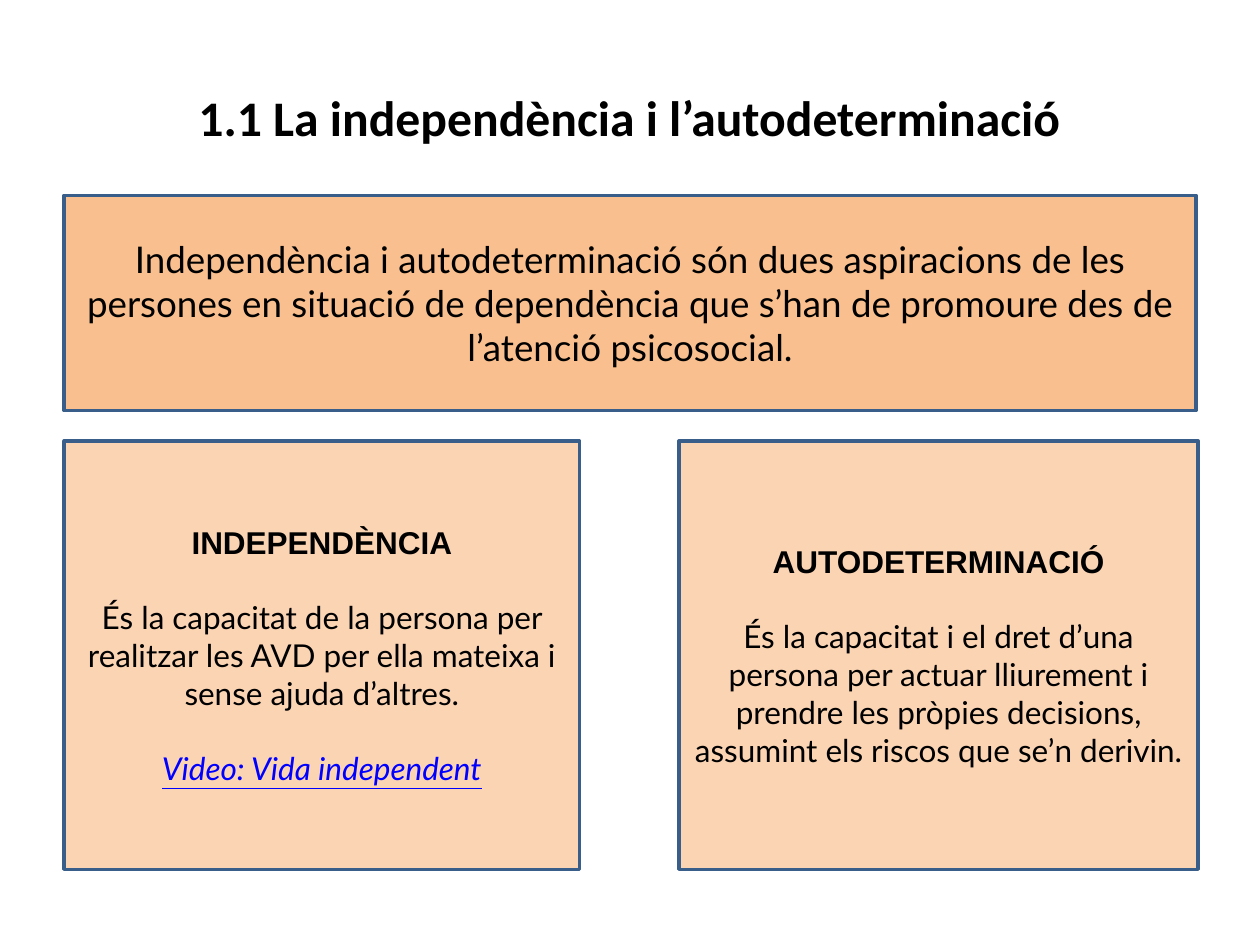
from pptx import Presentation
from pptx.util import Pt
from pptx.dml.color import RGBColor
from pptx.enum.shapes import MSO_SHAPE
from pptx.enum.text import PP_ALIGN, MSO_ANCHOR, MSO_AUTO_SIZE

HUES = {"ink": "000000", "link": "0000FF", "edge": "395E89",
        "deep": "FABF8E", "pale": "FBD4B4"}
HEAD = {"font": "Arial", "size": 18, "bold": True}
BODY = {"font": "Lato", "size": 18, "gap": 21.3}
LINK = {**BODY, "hue": "link", "italic": True, "line": True}

TITLE = [("1.1 La independència i l’autodeterminació",
          {"font": "Calibri", "size": 28.4, "bold": True})]
INTRO = [("Independència i autodeterminació són dues aspiracions de les "
          "persones en situació de dependència que s’han de promoure des de "
          "l’atenció psicosocial.",
          {"font": "Lato", "size": 21, "gap": 4.8})]
SELF = [("INDEPENDÈNCIA", HEAD),
        ("És la capacitat de la persona per realitzar les AVD per ella "
         "mateixa i sense ajuda d’altres.", BODY),
        ("Video: Vida independent", LINK)]
CHOICE = [("AUTODETERMINACIÓ", HEAD),
          ("És la capacitat i el dret d’una persona per actuar lliurement i "
           "prendre les pròpies decisions, assumint els riscos que se’n "
           "derivin.", BODY)]

LEFT, ROW, TALL = 36.7, 252, 244.8
BOXES = [
    (INTRO, "deep", (LEFT, 111.6, 646.6, 123.1)),
    (SELF, "pale", (LEFT, ROW, 294.5, TALL)),
    (CHOICE, "pale", (388.1, ROW, 296.6, TALL)),
]


def tint(name):
    return RGBColor.from_string(HUES[name])


def write(shape, paras):
    frame = shape.text_frame
    frame.word_wrap = True
    frame.auto_size = MSO_AUTO_SIZE.NONE
    frame.vertical_anchor = MSO_ANCHOR.MIDDLE
    for i, (text, look) in enumerate(paras):
        para = frame.add_paragraph() if i else frame.paragraphs[0]
        para.alignment = PP_ALIGN.CENTER
        para.space_before = Pt(look.get("gap", 0))
        run = para.add_run()
        run.text = text
        font = run.font
        font.name = look["font"]
        font.size = Pt(look["size"])
        font.bold = look.get("bold", False)
        font.italic = look.get("italic", False)
        font.underline = look.get("line", False)
        font.color.rgb = tint(look.get("hue", "ink"))


def main():
    deck = Presentation()
    deck.slide_width, deck.slide_height = Pt(720), Pt(540)
    slide = deck.slides.add_slide(deck.slide_layouts[5])
    title = slide.shapes.title
    title.left, title.top = Pt(36), Pt(21.6)
    title.width, title.height = Pt(648), Pt(90)
    write(title, TITLE)
    for paras, hue, place in BOXES:
        box = slide.shapes.add_shape(MSO_SHAPE.RECTANGLE, *map(Pt, place))
        box.shadow.inherit = False
        box.fill.solid()
        box.fill.fore_color.rgb = tint(hue)
        box.line.color.rgb = tint("edge")
        box.line.width = Pt(2)
        write(box, paras)
    deck.save("out.pptx")


if __name__ == "__main__":
    main()
